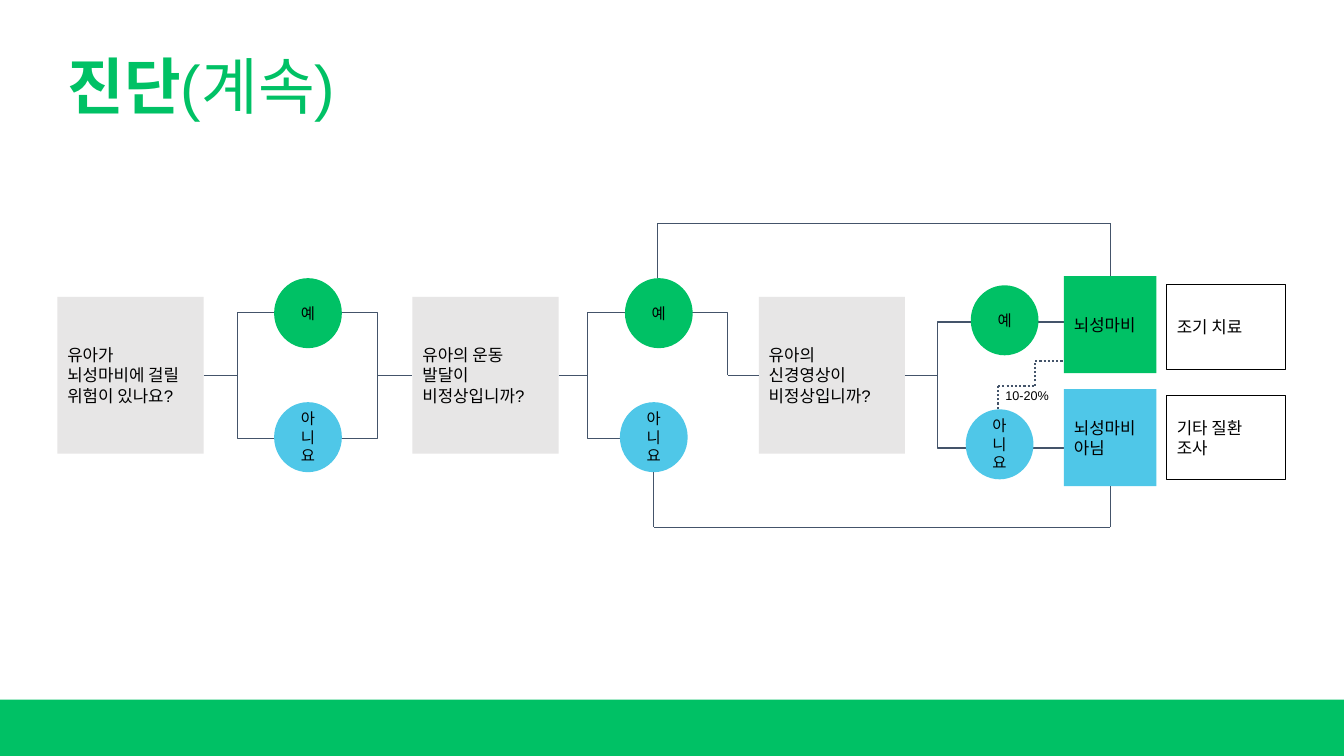
from lxml import etree
from pptx import Presentation
from pptx import util as u
from pptx.dml.color import RGBColor
from pptx.enum import dml, shapes, text
from pptx.oxml.ns import qn

GREEN, BLUE, GREY = "00C165", "4FC7E8", "E7E6E6"
SLATE, BLACK, WHITE = "44546A", "000000", "FFFFFF"
RECT, OVAL = shapes.MSO_SHAPE.RECTANGLE, shapes.MSO_SHAPE.OVAL
LEFT, CENTER = text.PP_ALIGN.LEFT, text.PP_ALIGN.CENTER


def color(value):
    return RGBColor.from_string(value)


class Flow:
    """Holds the current slide and the shared style."""

    font, line_width, inset = "Arial", 0.75, 7.2

    def __init__(self, slide):
        self.slide = slide

    def add_words(self, frame, runs, size, ink, align=LEFT, inset_y=inset):
        frame.word_wrap = True
        frame.auto_size = text.MSO_AUTO_SIZE.NONE
        frame.vertical_anchor = text.MSO_ANCHOR.MIDDLE
        frame.margin_left = frame.margin_right = u.Pt(self.inset)
        frame.margin_top = frame.margin_bottom = u.Pt(inset_y)
        paragraph = frame.paragraphs[0]
        paragraph.alignment = align
        for words, bold in runs:
            run = paragraph.add_run()
            run.text = words
            run.font.name, run.font.size, run.font.bold = self.font, u.Pt(size), bold
            run.font.color.rgb = color(ink)
        return paragraph

    def paint(self, shape, fill=None, line=None):
        shape.shadow.inherit = False
        if fill:
            shape.fill.solid()
            shape.fill.fore_color.rgb = color(fill)
        else:
            shape.fill.background()
        if line:
            shape.line.color.rgb = color(line)
            shape.line.width = u.Pt(self.line_width)
        else:
            shape.line.fill.background()

    def title(self, runs, x, y, w, h):
        title = self.slide.shapes.title
        title.left, title.top, title.width, title.height = map(u.Pt, (x, y, w, h))
        self.add_words(title.text_frame, runs, 44, GREEN, inset_y=3.6).line_spacing = 0.9

    def box(self, x, y, w, h, fill=None, line=None, words="", kind=RECT, size=12, align=LEFT):
        shape = self.slide.shapes.add_shape(kind, *map(u.Pt, (x, y, w, h)))
        self.paint(shape, fill, line)
        if words:
            self.add_words(shape.text_frame, [(words, False)], size, BLACK, align)
        return shape

    def answer(self, x, y, words, fill):
        return self.box(x, y, 48.4, 50, fill, words=words, kind=OVAL, size=11, align=CENTER)

    def label(self, x, y, w, h, words):
        label = self.slide.shapes.add_textbox(*map(u.Pt, (x, y, w, h)))
        self.add_words(label.text_frame, [(words, False)], 9, BLACK)

    def bracket(self, start, *corners):
        builder = self.slide.shapes.build_freeform(*start, scale=u.Pt(1))
        builder.add_line_segments(corners, close=False)
        self.paint(builder.convert_to_shape(), line=SLATE)

    def line(self, start, end, begin=None, finish=None, dotted=False):
        line = self.slide.shapes.add_connector(
            shapes.MSO_CONNECTOR.STRAIGHT, *map(u.Pt, (*start, *end)))
        line.line.color.rgb = color(SLATE)
        line.line.width = u.Pt(1.5 if dotted else self.line_width)
        if dotted:
            line.line.dash_style = dml.MSO_LINE.ROUND_DOT
        etree.SubElement(line._element.spPr, qn("a:effectLst"))
        if begin:
            line.begin_connect(*begin)
        if finish:
            line.end_connect(*finish)


def main():
    deck = Presentation()
    deck.slide_width, deck.slide_height = u.Pt(960), u.Pt(540)
    flow = Flow(deck.slides.add_slide(deck.slide_layouts[5]))

    # Title and footer band
    flow.box(0, 499.7, 960, 40.3, GREEN)
    flow.title([("진단", True), ("(계속)", False)], 41, 36, 394, 56)

    # Branch outlines behind the answers
    middle = 268
    risk_loop = flow.box(170, 223, 100, 90, line=SLATE)
    flow.bracket((520, middle), (520, 223), (420, 223), (420, 313), (446, 313))
    flow.bracket((762, 230), (670, 230), (670, 320), (762, 320))

    # Questions
    risk, motor, imaging = [
        flow.box(x, middle - 56, 104.4, 112, GREY, words=question)
        for x, question in ((41, "유아가 뇌성마비에 걸릴 위험이 있나요?"),
                            (294.6, "유아의 운동 발달이 비정상입니까?"),
                            (542, "유아의 신경영상이 비정상입니까?"))]

    # Yes and no answers
    for yes_x, no_x, top in ((195.8, 195.8, 198.7), (446.4, 442.8, 198.7),
                             (693.4, 689.8, 203.8)):
        flow.answer(no_x, top + 88.6, "아니요", BLUE)
        flow.answer(yes_x, top, "예", GREEN)

    # Diagnoses and next steps
    palsy = flow.box(760, 197.3, 66, 69.3, GREEN, words="뇌성마비")
    no_palsy = flow.box(760, 277.9, 66, 69.3, BLUE, words="뇌성마비 아님")
    for y, step in ((203.5, "조기 치료"), (282.3, "기타 질환 조사")):
        flow.box(833.5, y, 85, 60.5, WHITE, BLACK, step)

    # Links along the middle
    flow.line((145, middle), (170, middle), (risk, 3), (risk_loop, 1))
    flow.line((270, middle), (294, middle), (risk_loop, 3), (motor, 1))
    flow.line((399, middle), (420, middle), (motor, 3))
    flow.line((520, middle), (542, middle), finish=(imaging, 1))
    flow.line((646, middle), (670, middle), (imaging, 3))

    # Rails from the motor answers to the diagnoses
    for x, answer_y, rail_y, diagnosis, side in ((470, 198.7, 159.5, palsy, 0),
                                                 (467, 337.3, 376.5, no_palsy, 2)):
        flow.line((x, answer_y), (x, rail_y))
        flow.line((x, rail_y), (793, rail_y))
        flow.line((793, rail_y), (793, rail_y), finish=(diagnosis, side))

    # Dotted route for the exceptions
    steps = [(713, 292), (713, 275.5), (739.5, 275.5), (739.5, 258), (760, 258)]
    for start, end in zip(steps, steps[1:]):
        flow.line(start, end, dotted=True)
    flow.label(711, 274.5, 65.5, 16.5, "10-20%")

    deck.save("out.pptx")


if __name__ == "__main__":
    main()
